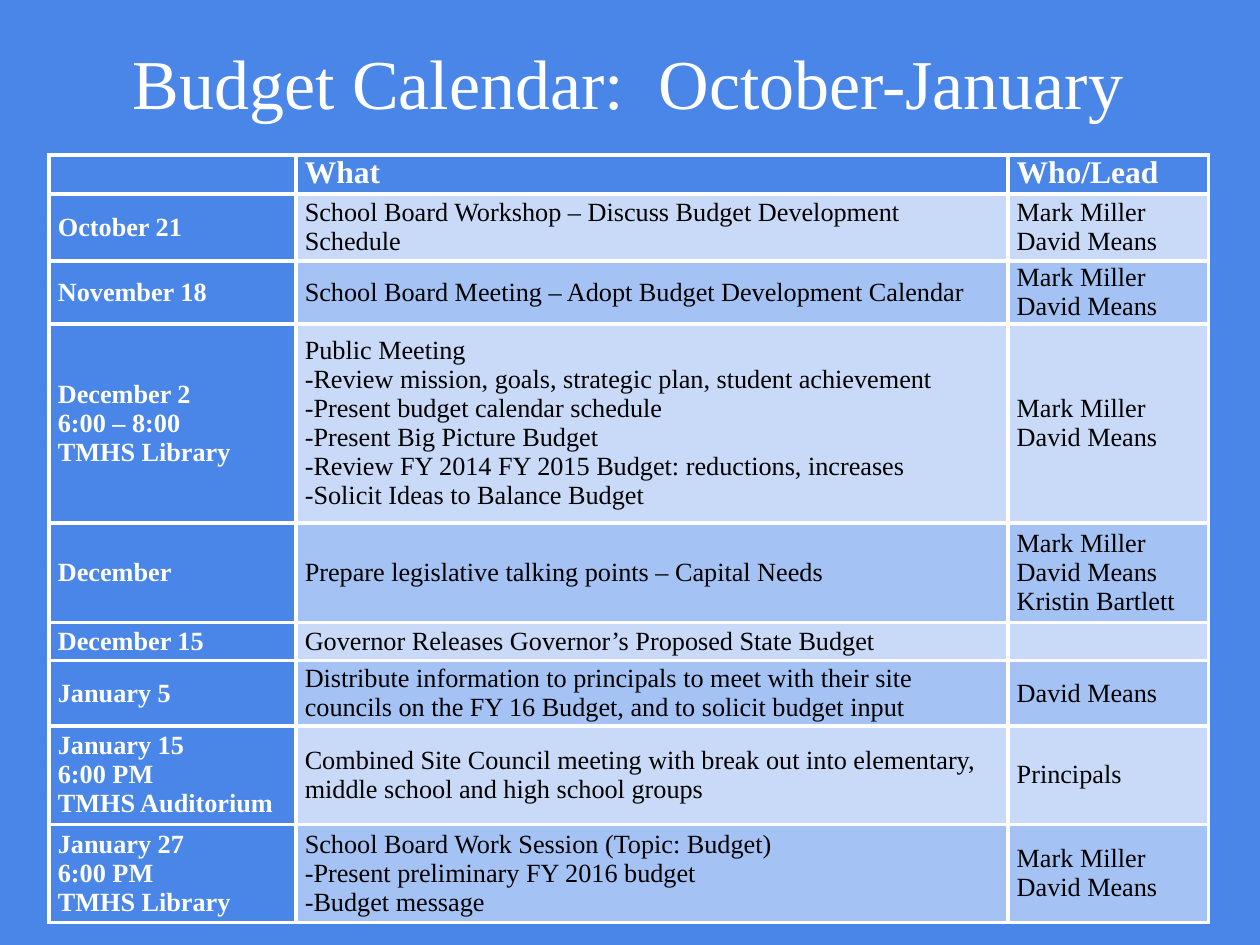
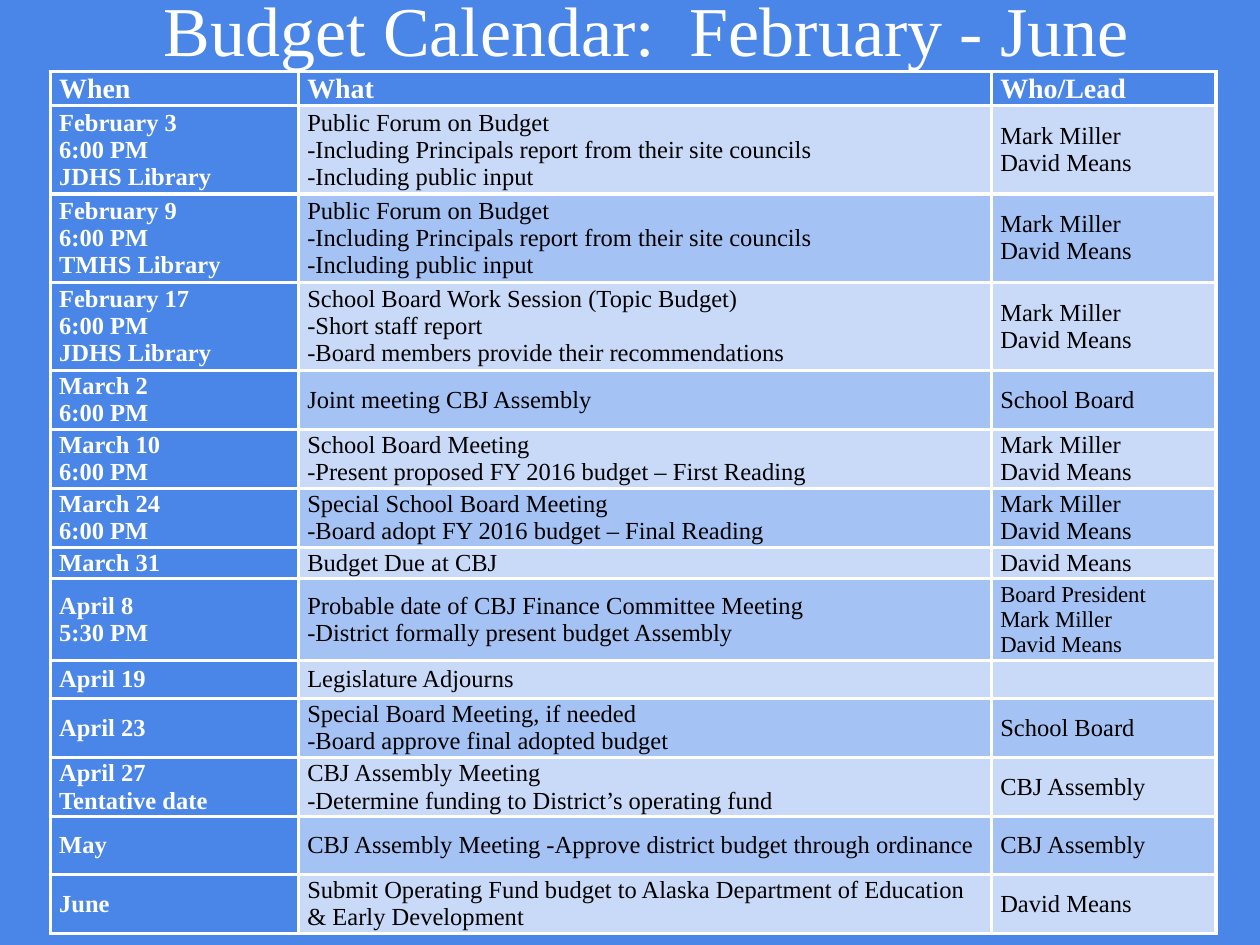
"""Build the two budget calendar slides, each a title over a three-column table."""
import dataclasses

import pptx
import pptx.dml.color
import pptx.enum.text
import pptx.oxml
import pptx.oxml.ns
import pptx.util

Pt = pptx.util.Pt
RGB = pptx.dml.color.RGBColor.from_string
ANCHOR = pptx.enum.text.MSO_ANCHOR
ALIGN = pptx.enum.text.PP_ALIGN


@dataclasses.dataclass(frozen=True)
class Theme:
    font: str = "Times New Roman"
    blue: str = "4A86E8"
    bands: tuple = ("C9DAF8", "A4C2F4")
    white: str = "FFFFFF"
    black: str = "000000"
    title_size: float = 40
    border: float = 2.25
    title_inset: float = 7.2
    cell_inset: float = 5


T = Theme()
LEADS = "Mark Miller\nDavid Means"
FORUM = ("Public Forum on Budget\n-Including Principals report from their site councils\n"
         "-Including public input")

CALENDARS = [
    {
        "title": "Budget Calendar:  October-January",
        "title_box": (45.4, 18.7, 627.1, 51.8),
        "table_at": (28.1, 88.6),
        "widths": (141.1, 406.8, 114.5),
        "head_size": 18, "body_size": 15, "head_anchor": ANCHOR.TOP,
        "head": (22.3, "", "What", "Who/Lead"),
        "rows": [
            (38.2, "October 21",
             "School Board Workshop – Discuss Budget Development Schedule", LEADS),
            (36, "November 18", "School Board Meeting – Adopt Budget Development Calendar", LEADS),
            (113.8, "December 2\n6:00 – 8:00\nTMHS Library",
             "Public Meeting\n"
             "-Review mission, goals, strategic plan, student achievement\n"
             "-Present budget calendar schedule\n"
             "-Present Big Picture Budget\n"
             "-Review FY 2014 FY 2015 Budget: reductions, increases\n"
             "-Solicit Ideas to Balance Budget", LEADS),
            (56.9, "December", "Prepare legislative talking points – Capital Needs",
             LEADS + "\nKristin Bartlett"),
            (18.7, "December 15", "Governor Releases Governor’s Proposed State Budget", ""),
            (37.4, "January 5",
             "Distribute information to principals to meet with their site councils "
             "on the FY 16 Budget, and to solicit budget input", "David Means"),
            (56.2, "January 15\n6:00 PM\nTMHS Auditorium",
             "Combined Site Council meeting with break out into elementary, "
             "middle school and high school groups", "Principals"),
            (56.2, "January 27\n6:00 PM\nTMHS Library",
             "School Board Work Session (Topic: Budget)\n"
             "-Present preliminary FY 2016 budget\n-Budget message", LEADS),
        ],
        "lead_sizes": {},
    },
    {
        "title": "Budget Calendar:  February - June",
        "title_box": (45.4, 12.2, 648, 28.1),
        "table_at": (28.8, 41),
        "widths": (141.8, 396, 128.2),
        "head_size": 16, "body_size": 14, "head_anchor": ANCHOR.MIDDLE,
        "head": (19.4, "When", "What", "Who/Lead"),
        "rows": [
            (49, "February 3\n6:00 PM\nJDHS Library", FORUM, LEADS),
            (49, "February 9\n6:00 PM\nTMHS Library", FORUM, LEADS),
            (49, "February 17\n6:00 PM\nJDHS Library",
             "School Board Work Session (Topic Budget)\n-Short staff report\n"
             "-Board members provide their recommendations", LEADS),
            (33.1, "March 2\n6:00 PM", "Joint meeting CBJ Assembly", "School Board"),
            (33.1, "March 10\n6:00 PM",
             "School Board Meeting\n-Present proposed FY 2016 budget – First Reading", LEADS),
            (33.1, "March 24\n6:00 PM",
             "Special School Board Meeting\n-Board adopt FY 2016 budget – Final Reading", LEADS),
            (18, "March 31", "Budget Due at CBJ", "David Means"),
            (46.8, "April 8\n5:30 PM",
             "Probable date of CBJ Finance Committee Meeting\n"
             "-District formally present budget Assembly", "Board President\n" + LEADS),
            (16.6, "April 19", "Legislature Adjourns", ""),
            (33.8, "April 23",
             "Special Board Meeting, if needed\n-Board approve final adopted budget",
             "School Board"),
            (33.1, "April 27\nTentative date",
             "CBJ Assembly Meeting\n-Determine funding to District’s operating fund",
             "CBJ Assembly"),
            (33.1, "May", "CBJ Assembly Meeting -Approve district budget through ordinance",
             "CBJ Assembly"),
            (33.1, "June",
             "Submit Operating Fund budget to Alaska Department of Education "
             "& Early Development", "David Means"),
        ],
        "lead_sizes": {"April 8\n5:30 PM": 13},
    },
]


def write(tf, text, size, color, bold=False, align=ALIGN.LEFT):
    for i, line in enumerate(text.split("\n")):
        p = tf.add_paragraph() if i else tf.paragraphs[0]
        p.alignment = align
        r = p.add_run()
        r.text = line
        r.font.name, r.font.size, r.font.bold = T.font, Pt(size), bold
        r.font.color.rgb = RGB(color)


def paint(fill, color):
    fill.solid()
    fill.fore_color.rgb = RGB(color)


def add_borders(cell):
    pr = cell._tc.get_or_add_tcPr()
    for i, side in enumerate("LRTB"):
        pr.insert(i, pptx.oxml.parse_xml(
            f'<a:ln{side} {pptx.oxml.ns.nsdecls("a")} w="{Pt(T.border)}">'
            f'<a:solidFill><a:srgbClr val="{T.white}"/></a:solidFill></a:ln{side}>'))


def fill_cell(cell, text, size, color, fill, bold, anchor):
    cell.margin_left = cell.margin_right = Pt(T.cell_inset)
    cell.margin_top = cell.margin_bottom = 0
    cell.vertical_anchor = anchor
    paint(cell.fill, fill)
    add_borders(cell)
    write(cell.text_frame, text, size, color, bold)


def add_title(s, text, box):
    sp = s.shapes.add_textbox(*map(Pt, box))
    paint(sp.fill, T.blue)
    tf = sp.text_frame
    tf.word_wrap = True
    tf.vertical_anchor = ANCHOR.BOTTOM
    tf.margin_left = tf.margin_right = Pt(T.title_inset)
    tf.margin_top = tf.margin_bottom = 0
    write(tf, text, T.title_size, T.white, align=ALIGN.CENTER)


def add_calendar(s, cal):
    rows = [cal["head"], *cal["rows"]]
    size = (sum(cal["widths"]), sum(row[0] for row in rows))
    table = s.shapes.add_table(len(rows), len(cal["widths"]),
                               *map(Pt, cal["table_at"] + size)).table
    for column, width in zip(table.columns, cal["widths"]):
        column.width = Pt(width)
    for i, (height, *texts) in enumerate(rows):
        table.rows[i].height = Pt(height)
        for j, text in enumerate(texts):
            label = i == 0 or j == 0
            size = cal["body_size"] if i else cal["head_size"]
            if j == 2:
                size = cal["lead_sizes"].get(texts[0], size)
            fill_cell(table.cell(i, j), text, size,
                      T.white if label else T.black,
                      T.blue if label else T.bands[(i - 1) % 2],
                      label, ANCHOR.MIDDLE if i else cal["head_anchor"])


def main():
    prs = pptx.Presentation()
    prs.slide_width, prs.slide_height = Pt(720), Pt(540)
    for cal in CALENDARS:
        s = prs.slides.add_slide(prs.slide_layouts[6])
        paint(s.background.fill, T.blue)
        add_title(s, cal["title"], cal["title_box"])
        add_calendar(s, cal)
    prs.save("out.pptx")


if __name__ == "__main__":
    main()
